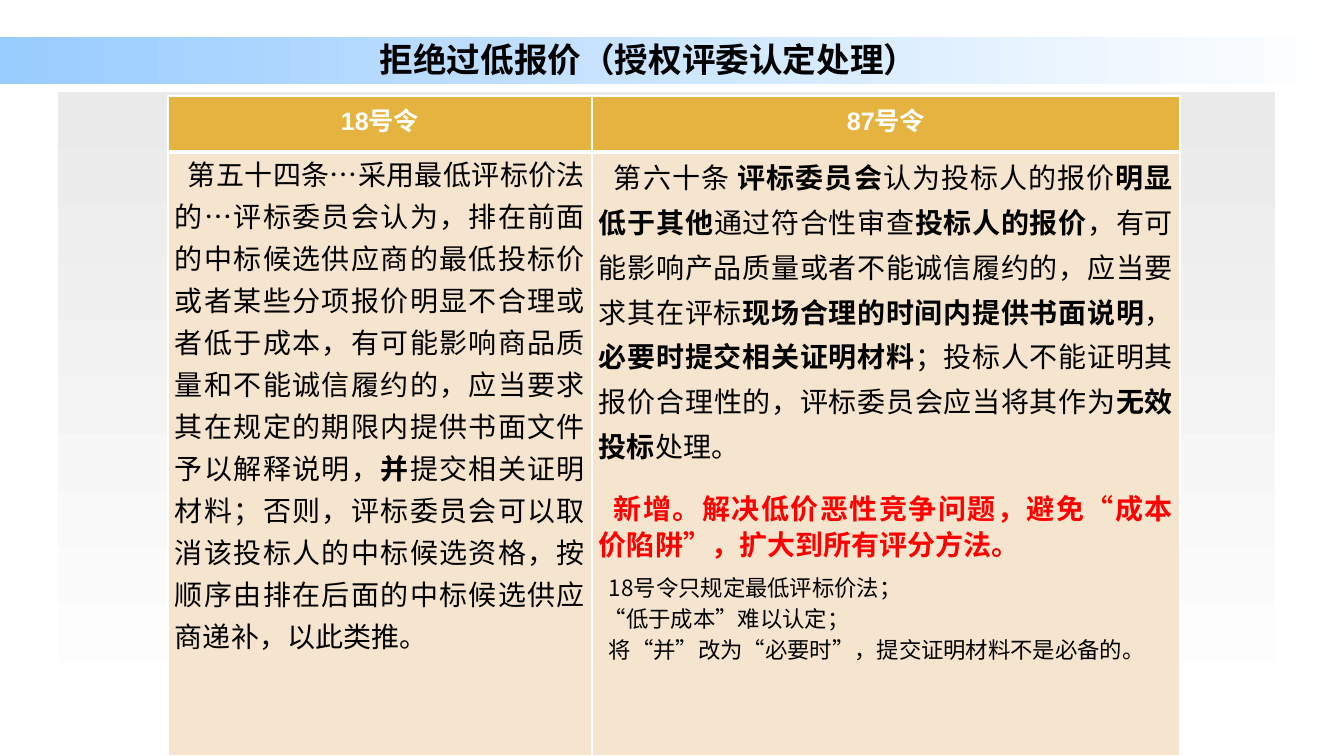
from lxml.etree import SubElement
from pptx import Presentation
from pptx.dml.color import RGBColor
from pptx.enum.shapes import MSO_SHAPE
from pptx.enum.text import MSO_ANCHOR, PP_ALIGN
from pptx.oxml.ns import qn
from pptx.util import Emu, Pt

ORDER_18 = (
    "第五十四条…采用最低评标价法的…评标委员会认为，排在前面的中标候选供应商的最低投标价"
    "或者某些分项报价明显不合理或者低于成本，有可能影响商品质量和不能诚信履约的，"
    "应当要求其在规定的期限内提供书面文件予以解释说明，*并*提交相关证明材料；否则，"
    "评标委员会可以取消该投标人的中标候选资格，按顺序由排在后面的中标候选供应商递补，以此类推。"
)
ORDER_87 = (
    "第六十条 *评标委员会*认为投标人的报价*明显低于其他*通过符合性审查*投标人的报价*，"
    "有可能影响产品质量或者不能诚信履约的，应当要求其在评标*现场合理的时间内提供书面说明*，"
    "*必要时提交相关证明材料*；投标人不能证明其报价合理性的，评标委员会应当将其作为*无效投标*处理。"
)
ADDITION = "*新增。解决低价恶性竞争问题，避免“成本价陷阱”，扩大到所有评分方法。*"


def px(length):
    return Emu(round(length * 914400 / 100.8))


def color(value):
    return RGBColor.from_string(value)


def write(para, text, size=20, fill="000000", latin="Noto Sans CJK SC",
          align=PP_ALIGN.JUSTIFY, line=None, before=0, indent=0):
    """Fill a paragraph; text between asterisks is bold."""
    para.alignment = align
    para.space_before = Pt(before)
    if line:
        para.line_spacing = Pt(line)
    if indent:
        para._p.get_or_add_pPr().set("indent", str(px(indent)))
    for index, part in enumerate(text.split("*")):
        if part:
            span = para.add_run()
            span.text = part
            span.font.size = Pt(size)
            span.font.bold = index % 2 == 1
            span.font.name = latin
            span.font.color.rgb = color(fill)
            east_asian = SubElement(span._r.get_or_add_rPr(), qn("a:ea"))
            east_asian.set("typeface", "Noto Sans CJK SC")


class SlideBuilder:
    """Holds the slide and its shared style."""

    white = "FFFFFF"
    header_fill = "E5B440"
    body_fill = "F5E5CE"

    def __init__(self, page):
        self.page = page

    def gradient_band(self, left, top, width, height, start, angle):
        band = self.page.shapes.add_shape(
            MSO_SHAPE.RECTANGLE, px(left), px(top), px(width), px(height))
        band.shadow.inherit = False
        band.line.fill.background()
        band.fill.gradient()
        band.fill.gradient_angle = angle
        for stop, value, position in zip(band.fill.gradient_stops, (start, self.white), (0, 1)):
            stop.color.rgb = color(value)
            stop.position = position

    def title(self, left, top, width, height, text):
        box = self.page.shapes.add_textbox(px(left), px(top), px(width), px(height))
        frame = box.text_frame
        frame.word_wrap = True
        frame.vertical_anchor = MSO_ANCHOR.MIDDLE
        write(frame.paragraphs[0], f"*{text}*", size=24, align=PP_ALIGN.CENTER)

    def table(self, left, top, widths, heights):
        table = self.page.shapes.add_table(
            len(heights), len(widths), px(left), px(top),
            px(sum(widths)), px(sum(heights))).table
        table.horz_banding = False
        for column, width in zip(table.columns, widths):
            column.width = px(width)
        for row, height in zip(table.rows, heights):
            row.height = px(height)
        return table

    def cell(self, cell, fill, margins, borders, paragraphs):
        cell.margin_left = cell.margin_right = px(margins[0])
        cell.margin_top = cell.margin_bottom = px(margins[1])
        for side, width in zip("LRTB", borders):
            edge = SubElement(cell._tc.get_or_add_tcPr(), qn(f"a:ln{side}"), w=str(Pt(width)))
            paint = SubElement(edge, qn("a:solidFill"))
            SubElement(paint, qn("a:srgbClr"), val=self.white)
        cell.fill.solid()
        cell.fill.fore_color.rgb = color(fill)
        frame = cell.text_frame
        for index, (text, style) in enumerate(paragraphs):
            para = frame.add_paragraph() if index else frame.paragraphs[0]
            write(para, text, **style)

    def header_cell(self, cell, text):
        style = dict(size=18, fill=self.white, latin="Arial", align=PP_ALIGN.CENTER)
        self.cell(cell, self.header_fill, (10, 5), (1, 1, 1, 3), [(f"*{text}*", style)])

    def body_cell(self, cell, paragraphs):
        self.cell(cell, self.body_fill, (7, 0), (1, 1, 3, 1), paragraphs)


def main():
    deck = Presentation()
    deck.slide_width, deck.slide_height = px(1344), px(756)
    builder = SlideBuilder(deck.slides.add_slide(deck.slide_layouts[6]))
    builder.gradient_band(58, 92, 1217, 627, "EAEAEA", 270)
    builder.gradient_band(0, 37, 1344, 47, "99CCFF", 0)

    table = builder.table(168, 96, (424, 588), (56, 604))
    for column, heading in enumerate(("18号令", "87号令")):
        builder.header_cell(table.cell(0, column), heading)
    note = dict(size=16, line=22, indent=10)
    builder.body_cell(table.cell(1, 0), [(ORDER_18, dict(line=30, indent=13))])
    builder.body_cell(table.cell(1, 1), [
        (ORDER_87, dict(line=32, indent=15)),
        (ADDITION, dict(fill="FF0000", line=26, before=18, indent=15)),
        ("18号令只规定最低评标价法；", dict(note, before=6)),
        ("“低于成本”难以认定；", dict(note, indent=5)),
        ("将“并”改为“必要时”，提交证明材料不是必备的。", note),
    ])
    builder.title(195, -4, 907, 126, "拒绝过低报价（授权评委认定处理）")
    deck.save("out.pptx")


if __name__ == "__main__":
    main()
